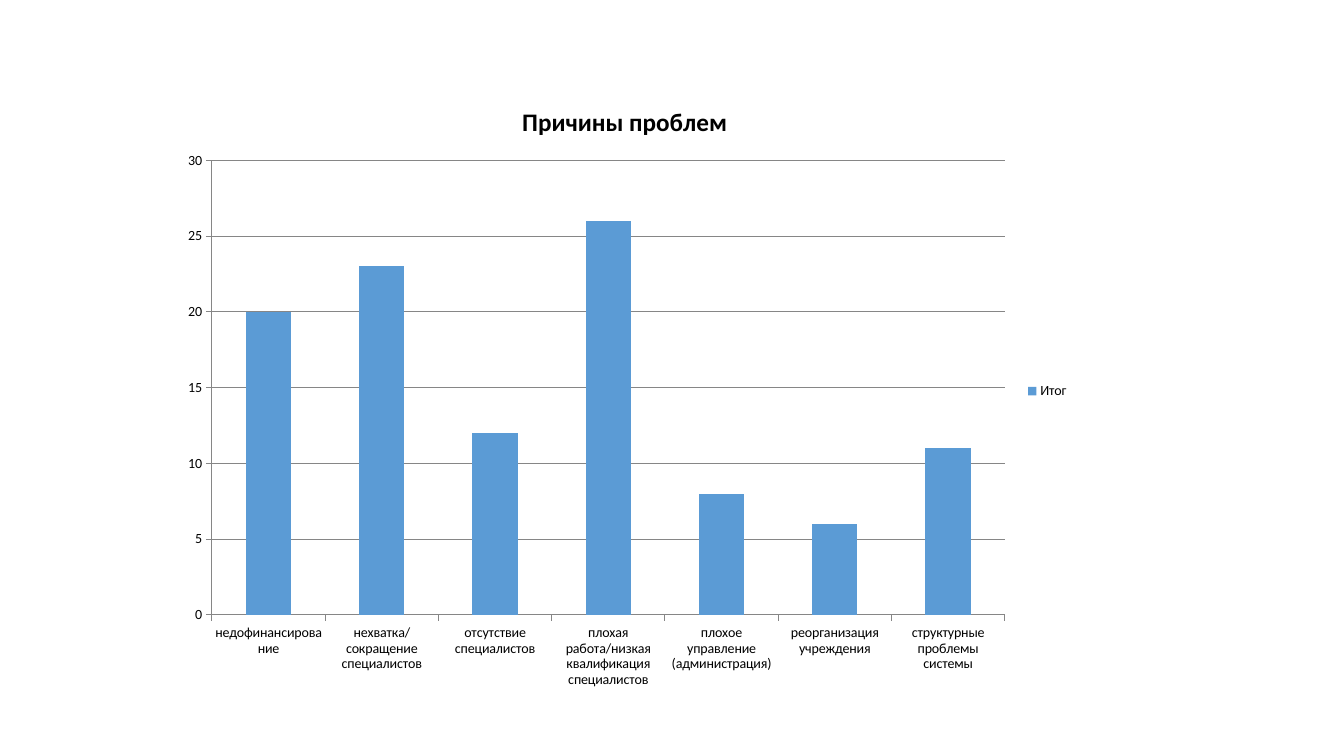
from dataclasses import dataclass

import lxml.etree
import pptx
import pptx.chart.data
import pptx.dml.color
import pptx.enum.chart
import pptx.oxml
import pptx.oxml.ns
import pptx.util

PX = 9525
BLANK_LAYOUT = 6


@dataclass(frozen=True)
class Theme:
    font: str = "Calibri"
    text: str = "000000"
    line: str = "868686"
    bar: str = "5B9BD5"
    title_size: int = 18
    label_size: int = 10
    line_width: float = 0.75


@dataclass(frozen=True)
class Cause:
    label: str
    answers: int


THEME = Theme()
CAUSES = [
    Cause("недофинансирование", 20),
    Cause("нехватка/сокращение специалистов", 23),
    Cause("отсутствие специалистов", 12),
    Cause("плохая работа/низкая квалификация специалистов", 26),
    Cause("плохое управление (администрация)", 8),
    Cause("реорганизация учреждения", 6),
    Cause("структурные проблемы системы", 11),
]


def px(length: int) -> pptx.util.Emu:
    return pptx.util.Emu(length * PX)


def rgb(colour: str) -> pptx.dml.color.RGBColor:
    return pptx.dml.color.RGBColor.from_string(colour)


def format_font(font, *, size: int, bold: bool = False) -> None:
    font.name = THEME.font
    font.size = pptx.util.Pt(size)
    font.bold = bold
    font.color.rgb = rgb(THEME.text)


def write_text(frame, text: str, *, size: int, bold: bool = False) -> None:
    span = frame.paragraphs[0].add_run()
    span.text = text
    format_font(span.font, size=size, bold=bold)


def format_line(line) -> None:
    line.color.rgb = rgb(THEME.line)
    line.width = pptx.util.Pt(THEME.line_width)


def format_axis(axis, *, gridlines: bool) -> None:
    axis.major_tick_mark = pptx.enum.chart.XL_TICK_MARK.OUTSIDE
    axis.minor_tick_mark = pptx.enum.chart.XL_TICK_MARK.NONE
    axis.has_major_gridlines = gridlines
    format_line(axis.format.line)
    format_font(axis.tick_labels.font, size=THEME.label_size)
    if gridlines:
        format_line(axis.major_gridlines.format.line)


def place_plot(chart, **fractions: float) -> None:
    """Fix the inner plot area as fractions of the chart frame."""
    qn = pptx.oxml.ns.qn
    area = chart.element.find(".//" + qn("c:plotArea"))
    layout = area.find(qn("c:layout"))
    if layout is None:
        layout = lxml.etree.Element(qn("c:layout"))
        area.insert(0, layout)
    manual = lxml.etree.SubElement(layout, qn("c:manualLayout"))
    settings = {"layoutTarget": "inner", "xMode": "edge", "yMode": "edge", **fractions}
    for name, setting in settings.items():
        lxml.etree.SubElement(manual, qn("c:" + name)).set("val", str(setting))


def add_causes_chart(page) -> None:
    table = pptx.chart.data.CategoryChartData()
    table.categories = [cause.label for cause in CAUSES]
    table.add_series("Итог", [cause.answers for cause in CAUSES])
    chart = page.shapes.add_chart(
        pptx.enum.chart.XL_CHART_TYPE.COLUMN_CLUSTERED,
        px(162), px(78), px(866), px(589), table,
    ).chart
    format_font(chart.font, size=THEME.label_size)

    chart.has_title = True
    write_text(chart.chart_title.text_frame, "Причины проблем",
               size=THEME.title_size, bold=True)
    chart.chart_title.include_in_layout = False

    chart.has_legend = True
    chart.legend.position = pptx.enum.chart.XL_LEGEND_POSITION.RIGHT
    chart.legend.include_in_layout = False
    format_font(chart.legend.font, size=THEME.label_size)

    format_axis(chart.category_axis, gridlines=False)
    format_axis(chart.value_axis, gridlines=True)
    chart.value_axis.minimum_scale = 0
    chart.value_axis.maximum_scale = 30
    chart.value_axis.major_unit = 5

    plot = chart.plots[0]
    plot.vary_by_categories = False
    plot.gap_width = 150
    fill = plot.series[0].format.fill
    fill.solid()
    fill.fore_color.rgb = rgb(THEME.bar)
    place_plot(chart, x=0.046, y=0.127, w=0.872, h=0.735)


def main() -> None:
    deck = pptx.Presentation()
    deck.slide_width, deck.slide_height = px(1280), px(720)
    page = deck.slides.add_slide(deck.slide_layouts[BLANK_LAYOUT])
    add_causes_chart(page)
    deck.save("out.pptx")


if __name__ == "__main__":
    main()
